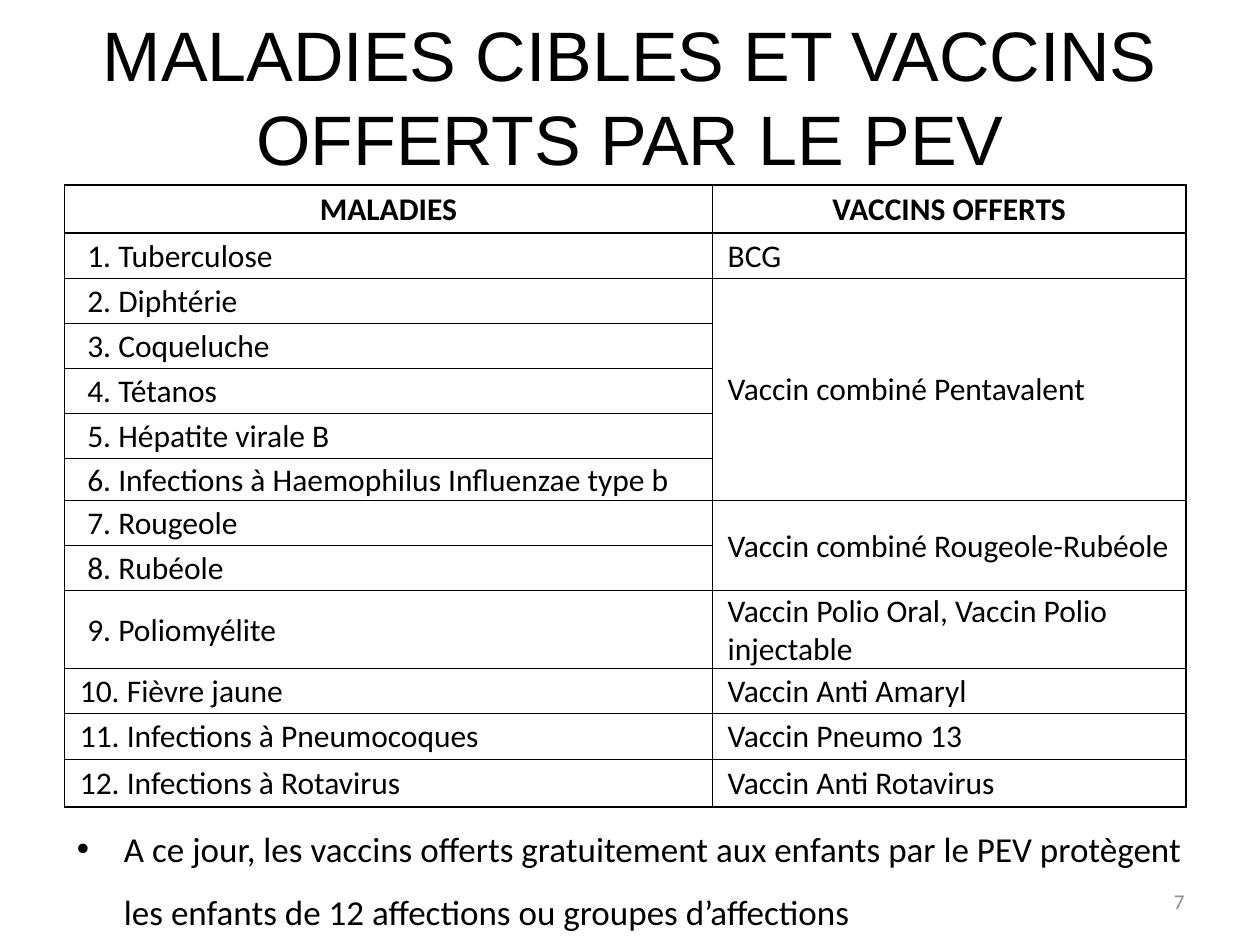
from lxml.etree import SubElement as Sub
from pptx import Presentation
from pptx.dml.color import RGBColor
from pptx.enum.text import MSO_ANCHOR as Anchor, MSO_AUTO_SIZE as Auto, PP_ALIGN as Align
from pptx.oxml.ns import qn
from pptx.util import Cm, Pt

BLACK = RGBColor(0, 0, 0)
GREY = RGBColor(0x8C, 0x8C, 0x8C)

ILLS = [
    "Tuberculose", "Diphtérie", "Coqueluche", "Tétanos", "Hépatite virale B",
    "Infections à Haemophilus Influenzae type b", "Rougeole", "Rubéole",
    "Poliomyélite", "Fièvre jaune", "Infections à Pneumocoques",
    "Infections à Rotavirus",
]
SHOTS = [
    ("BCG", 1),
    ("Vaccin combiné Pentavalent", 5),
    ("Vaccin combiné Rougeole-Rubéole", 2),
    ("Vaccin Polio Oral, Vaccin Polio injectable", 1),
    ("Vaccin Anti Amaryl", 1),
    ("Vaccin Pneumo 13", 1),
    ("Vaccin Anti Rotavirus", 1),
]
WIDTHS = [13.06, 9.55]
HEIGHTS = [0.97] + [0.91] * 5 + [0.84] + [0.91] * 2 + [1.57] + [0.91] * 2 + [0.97]


def write(frame, text, size, font="Calibri", color=BLACK, bold=False, align=Align.LEFT):
    frame.text = text
    para = frame.paragraphs[0]
    para.alignment = align
    face = para.runs[0].font
    face.name, face.size, face.bold = font, Pt(size), bold
    face.color.rgb = color
    return para


def add_text(slide, box, text, size, anchor=Anchor.TOP, **style):
    frame = slide.shapes.add_textbox(*map(Cm, box)).text_frame
    frame.word_wrap = True
    frame.vertical_anchor = anchor
    return write(frame, text, size, **style)


def set_title(slide, text):
    title = slide.shapes.title
    title.left, title.top = Cm(1.27), Cm(0.53)
    title.width, title.height = Cm(22.86), Cm(2.79)
    frame = title.text_frame
    frame.auto_size = Auto.NONE
    frame.vertical_anchor = Anchor.MIDDLE
    write(frame, text, 40, font="Arial", align=Align.CENTER)


def add_bullet(para):
    props = para._p.get_or_add_pPr()
    props.set("marL", str(Cm(0.95)))
    props.set("indent", str(-Cm(0.95)))
    Sub(props, qn("a:buFont"), typeface="Arial")
    Sub(props, qn("a:buChar"), char="•")


def frame_cell(cell, row, col):
    last = len(ILLS)
    thick = {
        "L": col == 0,
        "R": col == 1,
        "T": row in (0, 1),
        "B": row in (0, last),
    }
    props = cell._tc.get_or_add_tcPr()
    for side, heavy in thick.items():
        line = Sub(props, qn(f"a:ln{side}"), w=str(Pt(1 if heavy else 0.5)))
        Sub(Sub(line, qn("a:solidFill")), qn("a:srgbClr"), val=str(BLACK))
    cell.fill.background()
    cell.vertical_anchor = Anchor.MIDDLE
    cell.margin_left = cell.margin_right = cell.margin_top = Cm(0.03)
    cell.margin_bottom = 0


def fill_cell(cell, text, inset):
    write(cell.text_frame, text, 18)
    cell.margin_left = Cm(inset)


def add_grid(slide):
    size = Cm(sum(WIDTHS)), Cm(sum(HEIGHTS))
    grid = slide.shapes.add_table(len(HEIGHTS), 2, Cm(1.3), Cm(3.73), *size).table
    grid.first_row = grid.horz_banding = False
    for col, width in zip(grid.columns, WIDTHS):
        col.width = Cm(width)
    for row, height in enumerate(HEIGHTS):
        grid.rows[row].height = Cm(height)
        for col in range(2):
            frame_cell(grid.cell(row, col), row, col)
    for col, head in enumerate(["MALADIES", "VACCINS OFFERTS"]):
        write(grid.cell(0, col).text_frame, head, 18, bold=True, align=Align.CENTER)
    for num, ill in enumerate(ILLS, 1):
        fill_cell(grid.cell(num, 0), f"{num}. {ill}", 0.46 if num < 10 else 0.31)
    row = 1
    for shot, span in SHOTS:
        cell = grid.cell(row, 1)
        if span > 1:
            cell.merge(grid.cell(row + span - 1, 1))
        fill_cell(cell, shot, 0.31)
        row += span


def main():
    deck = Presentation()
    deck.slide_width, deck.slide_height = Cm(25.4), Cm(19.05)
    slide = deck.slides.add_slide(deck.slide_layouts[5])
    set_title(slide, "MALADIES CIBLES ET VACCINS OFFERTS PAR LE PEV")
    note = add_text(
        slide, (1.3, 16.13, 22.81, 2.01),
        "A ce jour, les vaccins offerts gratuitement aux enfants par le PEV "
        "protègent les enfants de 12 affections ou groupes d’affections", 20)
    note.line_spacing = 1.5
    note.space_before = Pt(4)
    add_bullet(note)
    add_grid(slide)
    add_text(slide, (18.21, 17.65, 5.92, 1.02), "7", 12, Anchor.MIDDLE,
             color=GREY, align=Align.RIGHT)
    deck.save("out.pptx")


if __name__ == "__main__":
    main()
